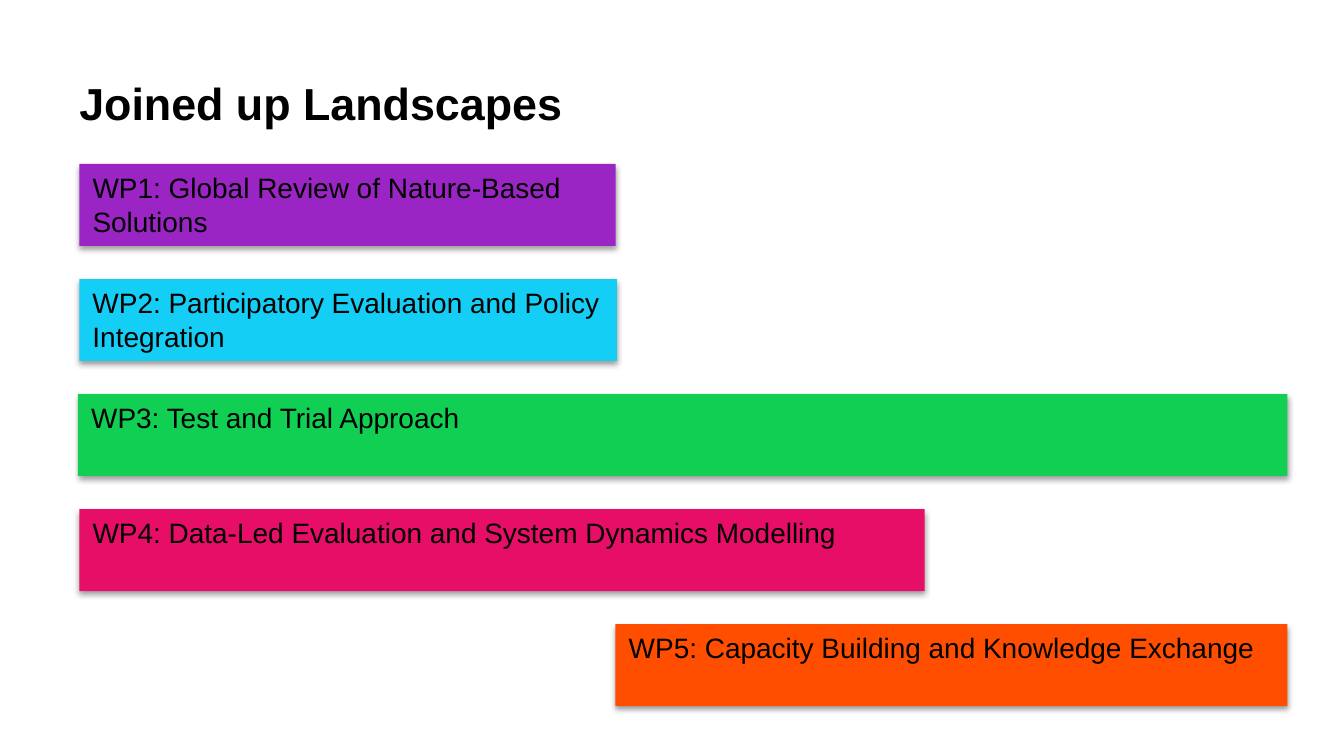
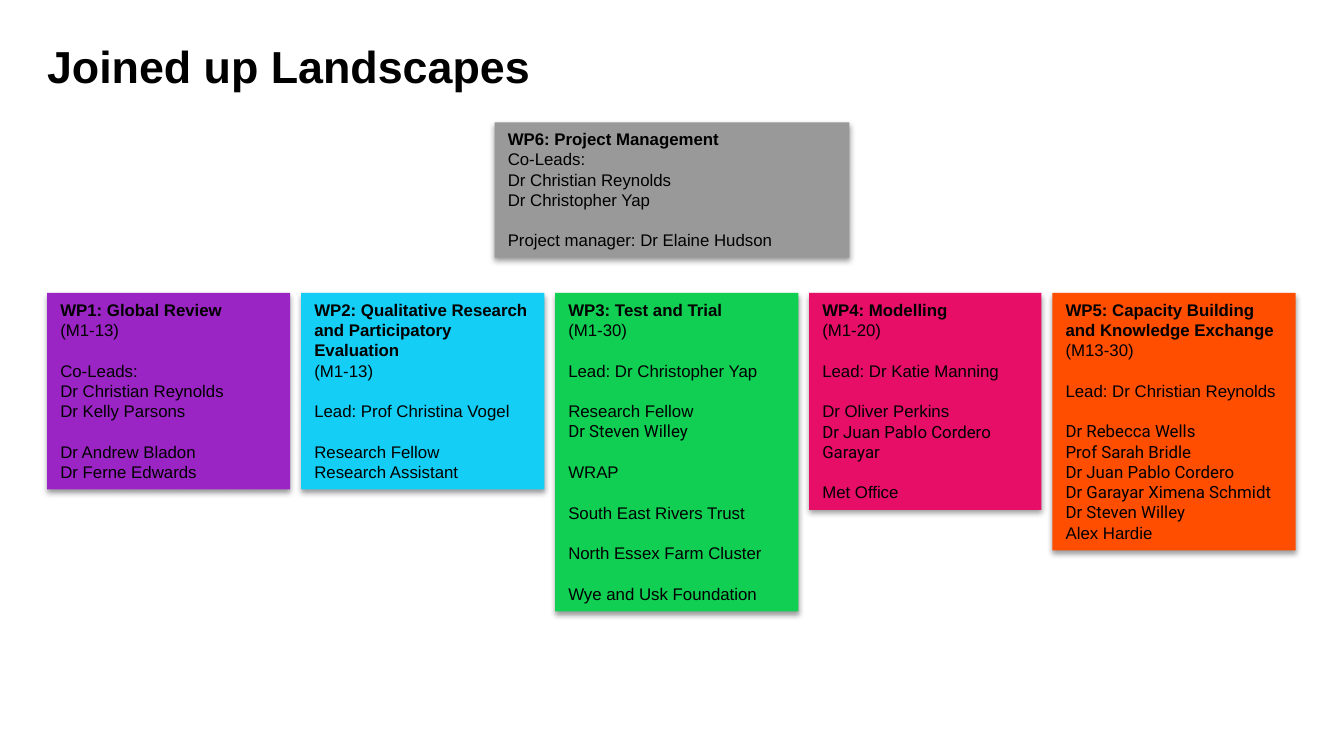
from dataclasses import dataclass

from lxml import etree
from pptx import Presentation
from pptx import util as u
from pptx.dml import color
from pptx.enum import shapes, text
from pptx.oxml import ns

WIDTH = 10
HEIGHT = WIDTH * 9 / 16
PURPLE, CYAN, GREEN, PINK, ORANGE, GREY = (
    "9B25C4", "14CEF5", "10CF53", "E60E67", "FF4E00", "999999")
BLACK = "000000"
TITLE = "Joined up Landscapes"
TITLE_FONT = dict(name="Arial", size=u.Pt(24), bold=True)
BAR_FONT = dict(name="Arial", size=u.Pt(15), bold=False)
CARD_FONT = dict(name="Arial", size=u.Pt(9), bold=False)
CARD_LINE = 10.9
CARD_ROW, CARD_PAD, CARD_GAP = CARD_LINE / 72, 0.1, 0.08
ROBOTO_NAMES = {
    "Dr Juan Pablo Cordero Garayar", "Dr Rebecca Wells", "Prof Sarah Bridle",
    "Dr Juan Pablo Cordero", "Dr Garayar Ximena Schmidt", "Dr Steven Willey"}


@dataclass
class Card:
    fill: str
    width: float
    rows: int
    heading: str
    groups: list
    tail: str = ""


BARS = [
    (PURPLE, 0, 3.99, "WP1: Global Review of Nature-Based Solutions"),
    (CYAN, 0, 4, "WP2: Participatory Evaluation and Policy Integration"),
    (GREEN, -0.01, 9, "WP3: Test and Trial Approach"),
    (PINK, 0, 6.29, "WP4: Data-Led Evaluation and System Dynamics Modelling"),
    (ORANGE, 3.99, 5, "WP5: Capacity Building and Knowledge Exchange"),
]

MANAGEMENT = Card(GREY, 2.64, 6, "WP6: Project Management", [
    ["Co-Leads:", "Dr Christian Reynolds", "Dr Christopher Yap"],
    ["Project manager: Dr Elaine Hudson"]])

PACKAGES = [
    Card(PURPLE, 1.81, 9, "WP1: Global Review", [
        ["(M1-13)"],
        ["Co-Leads:", "Dr Christian Reynolds", "Dr Kelly Parsons"],
        ["Dr Andrew Bladon", "Dr Ferne Edwards"]]),
    Card(CYAN, 1.81, 9,
         "WP2: Qualitative Research and Participatory Evaluation", [
             ["(M1-13)"],
             ["Lead: Prof Christina Vogel"],
             ["Research Fellow", "Research Assistant"]]),
    Card(GREEN, 1.81, 15, "WP3: Test and Trial", [
        ["(M1-30)"],
        ["Lead: Dr Christopher Yap"],
        ["Research Fellow", "Dr Steven Willey"],
        ["WRAP"],
        ["South East Rivers Trust"],
        ["North Essex Farm Cluster"],
        ["Wye and Usk Foundation"]]),
    Card(PINK, 1.73, 10, "WP4: Modelling", [
        ["(M1-20)"],
        ["Lead: Dr Katie Manning"],
        ["Dr Oliver Perkins", "Dr Juan Pablo Cordero Garayar"],
        ["Met Office"]]),
    Card(ORANGE, 1.81, 12, "WP5: Capacity Building and Knowledge Exchange ", [
        [],
        ["Lead: Dr Christian Reynolds"],
        ["Dr Rebecca Wells", "Prof Sarah Bridle", "Dr Juan Pablo Cordero",
         "Dr Garayar Ximena Schmidt", "Dr Steven Willey", "Alex Hardie"]],
        tail="(M13-30)"),
]


def rgb(value):
    return color.RGBColor.from_string(value)


def add_run(p, words, fmt, **changes):
    r = p.add_run()
    r.text = words
    for name, value in {**fmt, **changes}.items():
        setattr(r.font, name, value)
    r.font.color.rgb = rgb(BLACK)


def add_shadow(sp):
    effects = etree.SubElement(sp._element.spPr, ns.qn("a:effectLst"))
    shadow = etree.SubElement(
        effects, ns.qn("a:outerShdw"), blurRad=str(u.Pt(3.1)),
        dist=str(u.Pt(1.6)), dir="5400000", rotWithShape="0")
    tone = etree.SubElement(shadow, ns.qn("a:srgbClr"), val=BLACK)
    etree.SubElement(tone, ns.qn("a:alpha"), val="38000")


def add_paragraph(tf, first=False, gap=0):
    p = tf.paragraphs[0] if first else tf.add_paragraph()
    for name, value in dict(alignment=text.PP_ALIGN.LEFT, line_spacing=1.0,
                            space_before=u.Pt(gap)).items():
        setattr(p, name, value)
    return p


def add_panel(s, box, fill):
    sp = s.shapes.add_shape(shapes.MSO_SHAPE.RECTANGLE, *map(u.Inches, box))
    sp.fill.solid()
    sp.fill.fore_color.rgb = rgb(fill)
    sp.line.fill.background()
    add_shadow(sp)
    tf = sp.text_frame
    tf.word_wrap = True
    tf.vertical_anchor = text.MSO_ANCHOR.TOP
    return tf


def add_titled_slide(prs, box):
    s = prs.slides.add_slide(prs.slide_layouts.get_by_name("Title Only"))
    sp = s.shapes.title
    for name, value in zip(("left", "top", "width", "height"), box):
        setattr(sp, name, u.Inches(value))
    tf = sp.text_frame
    for side in ("left", "top", "right", "bottom"):
        setattr(tf, f"margin_{side}", 0)
    tf.word_wrap = True
    tf.auto_size = text.MSO_AUTO_SIZE.NONE
    tf.vertical_anchor = text.MSO_ANCHOR.TOP
    add_run(add_paragraph(tf, first=True), TITLE, TITLE_FONT)
    return s


def add_timeline(s, box):
    left, top, _, height = box
    pitch = height / len(BARS)
    for row, (fill, start, width, words) in enumerate(BARS):
        bar = left + start, top + row * pitch, width, 0.61
        tf = add_panel(s, bar, fill)
        add_run(add_paragraph(tf, first=True), words, BAR_FONT)


def add_card(s, left, top, card):
    box = left, top, card.width, CARD_PAD + card.rows * CARD_ROW
    tf = add_panel(s, box, card.fill)
    p = add_paragraph(tf, first=True)
    add_run(p, card.heading, CARD_FONT, bold=True)
    if card.tail:
        add_run(p, card.tail, CARD_FONT)
    for group, names in enumerate(card.groups):
        for row, name in enumerate(names):
            p = add_paragraph(tf, gap=CARD_LINE if group and not row else 0)
            font = "Roboto" if name in ROBOTO_NAMES else "Arial"
            add_run(p, name, CARD_FONT, name=font)


def add_card_row(s, left, top):
    for card in PACKAGES:
        add_card(s, left, top, card)
        left += card.width + CARD_GAP


def main():
    prs = Presentation()
    prs.slide_width, prs.slide_height = u.Inches(WIDTH), u.Inches(HEIGHT)
    s = add_titled_slide(prs, (0.59, 0.56, 8.9, 0.91))
    add_timeline(s, (0.59, 1.22, 9, 4.28))
    s = add_titled_slide(prs, (0.35, 0.29, 8.9, 0.49))
    add_card(s, (WIDTH - MANAGEMENT.width) / 2, 0.91, MANAGEMENT)
    add_card_row(s, 0.35, 2.18)
    prs.save("out.pptx")


if __name__ == "__main__":
    main()
